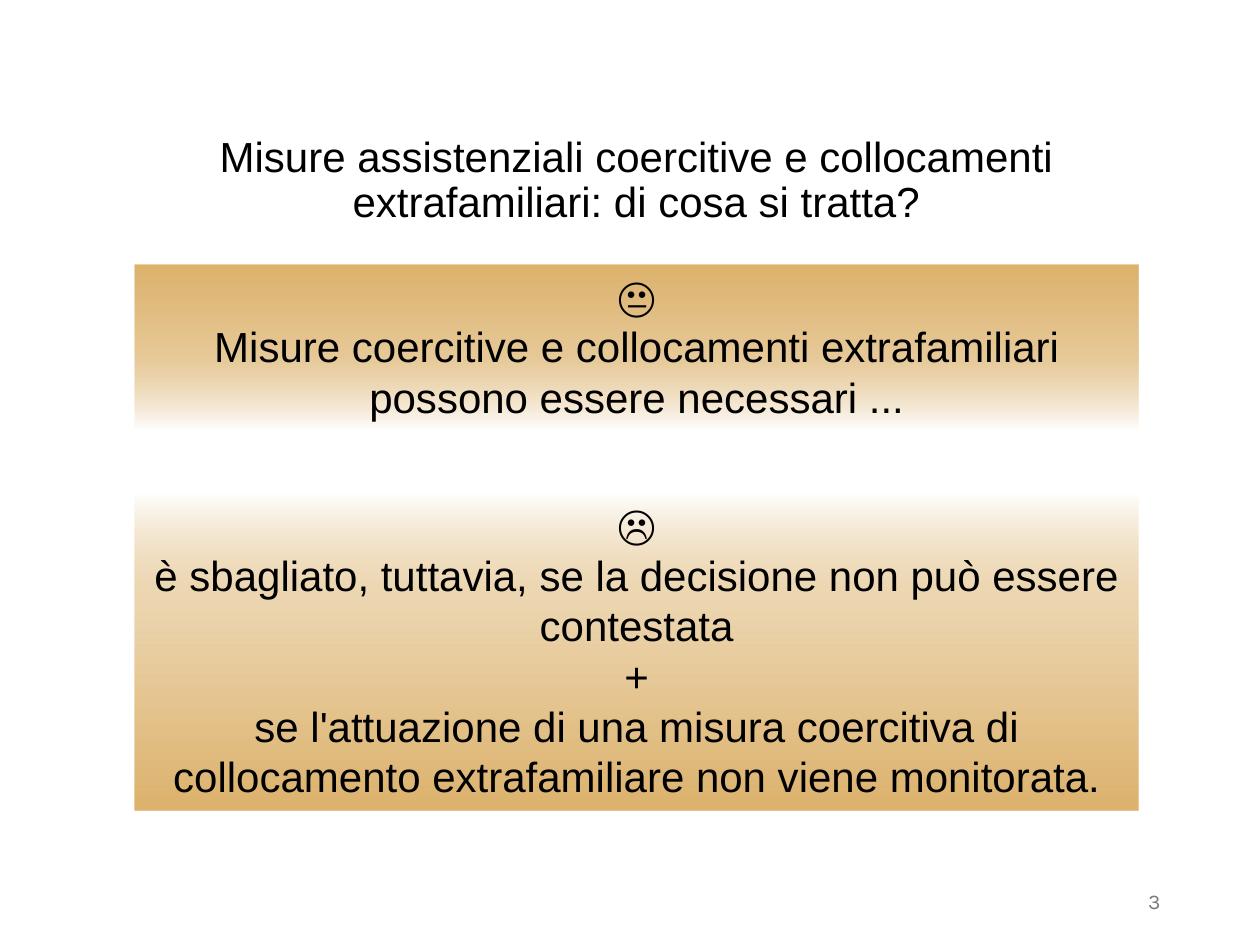
from dataclasses import dataclass

from lxml.etree import SubElement
from pptx import Presentation
from pptx.dml.color import RGBColor
from pptx.enum.shapes import MSO_SHAPE as Shape
from pptx.enum.text import MSO_ANCHOR as Anchor, MSO_AUTO_SIZE as AutoSize, PP_ALIGN as Align
from pptx.oxml.ns import qn
from pptx.util import Pt


@dataclass(frozen=True)
class Theme:
    font: str = "Arial"
    number_font: str = "Karla"
    ink: str = "000000"
    muted: str = "797979"
    sand: str = "DCB26C"
    paper: str = "FFFFFF"
    body_size: int = 24
    number_size: int = 12


def write(frame, *paragraphs, font, size, color, align=Align.CENTER,
          anchor=Anchor.TOP, auto_size=AutoSize.NONE, spacing=None):
    frame.word_wrap = True
    frame.auto_size = auto_size
    frame.vertical_anchor = anchor
    for index, wording in enumerate(paragraphs):
        paragraph = frame.add_paragraph() if index else frame.paragraphs[0]
        paragraph.text = wording
        paragraph.alignment = align
        if spacing:
            paragraph.line_spacing = spacing
        for run in paragraph.runs:
            run.font.name = font
            run.font.size = Pt(size)
            run.font.color.rgb = RGBColor.from_string(color)


class SlideBuilder:
    def __init__(self, slide, theme):
        self.slide = slide
        self.theme = theme
        self.body = dict(font=theme.font, size=theme.body_size, color=theme.ink)

    def title(self, wording, left, top, width, height):
        heading = self.slide.shapes.title
        heading.left, heading.top = Pt(left), Pt(top)
        heading.width, heading.height = Pt(width), Pt(height)
        write(heading.text_frame, wording, anchor=Anchor.MIDDLE, spacing=0.9, **self.body)

    def panel(self, paragraphs, stops, left, top, width, height):
        panel = self.slide.shapes.add_shape(
            Shape.RECTANGLE, Pt(left), Pt(top), Pt(width), Pt(height))
        panel.shadow.inherit = False
        panel.line.fill.background()
        self.shade(panel, stops)
        write(panel.text_frame, *paragraphs, auto_size=AutoSize.SHAPE_TO_FIT_TEXT, **self.body)

    def shade(self, panel, stops):
        panel.fill.gradient()
        panel.fill.gradient_angle = 270
        stop_list = next(panel.element.iter(qn("a:gsLst")))
        stop_list.clear()
        for position, color, opacity in stops:
            stop = SubElement(stop_list, qn("a:gs"), pos=str(position * 1000))
            tint = SubElement(stop, qn("a:srgbClr"), val=color)
            if opacity < 100:
                SubElement(tint, qn("a:alpha"), val=str(opacity * 1000))

    def page_number(self, wording, left, top, width, height):
        number = self.slide.shapes.add_textbox(Pt(left), Pt(top), Pt(width), Pt(height))
        write(number.text_frame, wording, font=self.theme.number_font,
              size=self.theme.number_size, color=self.theme.muted,
              align=Align.RIGHT, anchor=Anchor.MIDDLE)


def main():
    theme = Theme()
    deck = Presentation()
    deck.slide_width, deck.slide_height = Pt(720), Pt(540)
    builder = SlideBuilder(deck.slides.add_slide(deck.slide_layouts[5]), theme)

    panel_left, panel_width = 76.8, 574
    builder.title(
        "Misure assistenziali coercitive e collocamenti\nextrafamiliari: di cosa si tratta?",
        53.3, 60.5, 620.6, 86.4)
    builder.panel(
        ["😐", "Misure coercitive e collocamenti extrafamiliari possono essere necessari ..."],
        [(0, theme.sand, 100), (55, theme.sand, 70), (100, theme.paper, 100)],
        panel_left, 151, panel_width, 94.5)
    builder.panel(
        ["☹",
         "è sbagliato, tuttavia, se la decisione non può essere contestata",
         "+",
         "se l'attuazione di una misura coercitiva di collocamento extrafamiliare "
         "non viene monitorata."],
        [(0, theme.paper, 100), (36, theme.sand, 54), (100, theme.sand, 100)],
        panel_left, 281.5, panel_width, 181.5)
    builder.page_number("3", 508.3, 500.5, 162, 28.8)

    deck.save("out.pptx")


if __name__ == "__main__":
    main()
